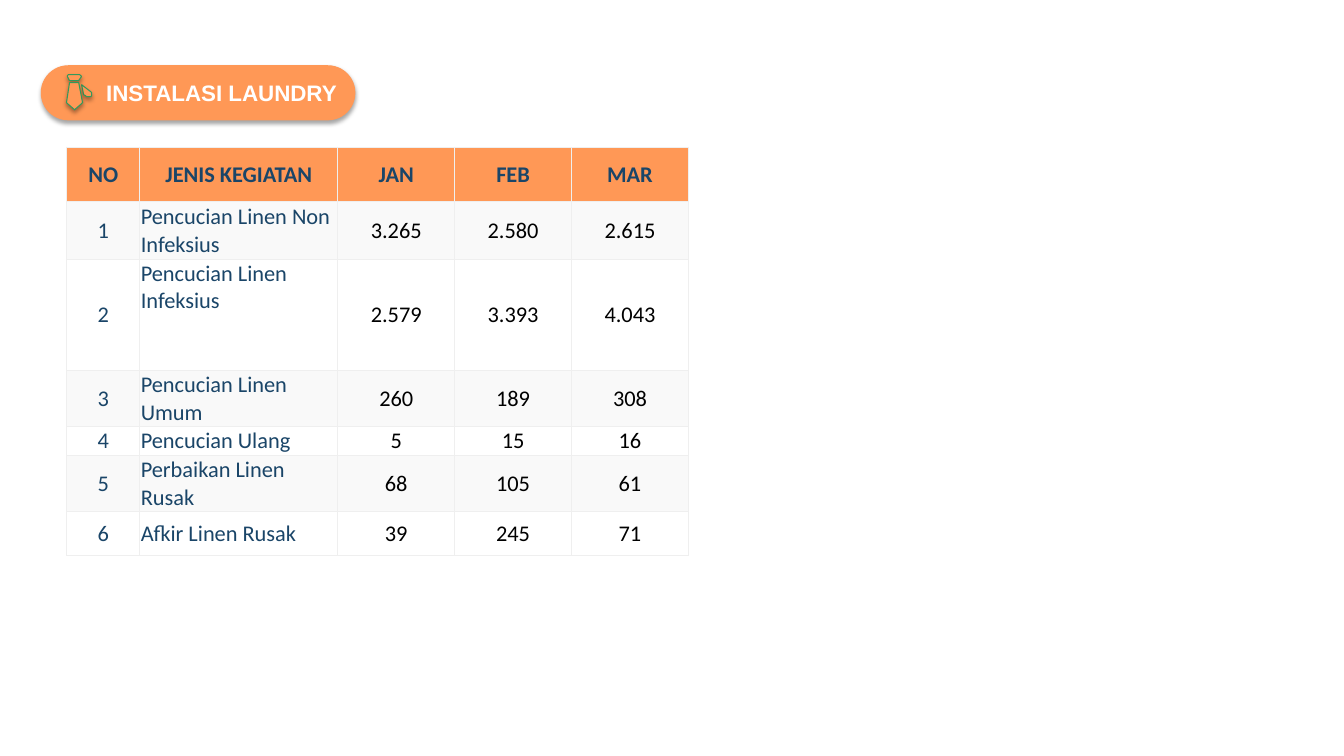
from dataclasses import dataclass

from lxml.etree import SubElement
from pptx import Presentation
from pptx.dml.color import RGBColor
from pptx.enum.shapes import MSO_SHAPE as Preset
from pptx.enum.text import MSO_ANCHOR as Anchor, PP_ALIGN as Align
from pptx.oxml import parse_xml
from pptx.oxml.ns import nsdecls, qn
from pptx.shapes.base import BaseShape
from pptx.table import Table, _Cell as Cell
from pptx.text.text import _Paragraph as Paragraph
from pptx.util import Pt

COLORS = {
    "orange": "FF9856", "green": "32995B", "navy": "1A4568", "black": "000000",
    "white": "FFFFFF", "band": "F9F9F9", "border": "EFEFEF",
}


@dataclass(frozen=True)
class Activity:
    name: str
    monthly: tuple[str, str, str]
    height: float
    anchor: Anchor = Anchor.MIDDLE


@dataclass(frozen=True)
class CellStyle:
    fill: str
    margins: tuple[float, float, float, float]
    bold: bool = False


HEADER = CellStyle("orange", (14.4, 5.8, 14.4, 5.8), bold=True)
BODY_STYLES = (CellStyle("band", (0.7, 0.7, 0.7, 0)), CellStyle("white", (0.7, 0.7, 0.7, 0)))
HEADINGS = ("NO", "JENIS KEGIATAN", "JAN", "FEB", "MAR")
COLUMN_WIDTHS = (52.3, 141.4, 83.5, 83.5, 83.5)
HEADER_HEIGHT = 39
ACTIVITIES = (
    Activity("Pencucian Linen Non Infeksius", ("3.265", "2.580", "2.615"), 41),
    Activity("Pencucian Linen Infeksius", ("2.579", "3.393", "4.043"), 79.3, Anchor.TOP),
    Activity("Pencucian Linen Umum", ("260", "189", "308"), 40),
    Activity("Pencucian Ulang", ("5", "15", "16"), 20.8),
    Activity("Perbaikan Linen Rusak", ("68", "105", "61"), 40),
    Activity("Afkir Linen Rusak", ("39", "245", "71"), 31.7),
)

# Outlines of the tie icon, in tenths of a point
TIE_PARTS = {
    "tail": ((583, 605), (598, 677), (612, 684), (619, 691), (648, 691), (655, 684),
             (655, 662), (648, 655)),
    "knot": ((490, 533), (482, 540), (482, 547), (497, 576), (562, 576), (583, 547),
             (576, 540), (569, 533)),
    "blade": ((497, 590), (475, 734), (526, 778), (533, 785), (540, 778), (590, 734),
              (562, 590)),
}


def rgb(color: str) -> RGBColor:
    return RGBColor.from_string(COLORS[color])


def set_font(paragraph: Paragraph, font_name: str, color: str, bold: bool) -> None:
    font = paragraph.font
    font.name, font.size, font.bold = font_name, Pt(16), bold
    font.color.rgb = rgb(color)


def style_badge_part(part: BaseShape, line_color: str) -> None:
    """Orange fill, thin outline and a soft shadow straight below."""
    part.fill.solid()
    part.fill.fore_color.rgb = rgb("orange")
    part.line.color.rgb = rgb(line_color)
    part.line.width = Pt(0.75)
    part._element.spPr.append(parse_xml(
        f'<a:effectLst {nsdecls("a")}><a:outerShdw blurRad="{Pt(3.1)}" dist="{Pt(1.8)}" '
        f'dir="5400000" rotWithShape="0"><a:srgbClr val="{COLORS["black"]}">'
        '<a:alpha val="35000"/></a:srgbClr></a:outerShdw></a:effectLst>'))


def add_badge(slide) -> None:
    shapes = slide.shapes.add_group_shape().shapes
    badge = shapes.add_shape(Preset.ROUNDED_RECTANGLE, Pt(29.5), Pt(47), Pt(224), Pt(38.6))
    badge.adjustments[0] = 0.5
    style_badge_part(badge, "orange")
    badge.text_frame.vertical_anchor = Anchor.MIDDLE
    title = badge.text_frame.paragraphs[0]
    title.text = "INSTALASI LAUNDRY"
    title.alignment = Align.RIGHT
    set_font(title, "Arial", "white", True)
    for start, *rest in TIE_PARTS.values():
        outline = shapes.build_freeform(*start, scale=Pt(0.1))
        outline.add_line_segments(rest, close=True)
        style_badge_part(outline.convert_to_shape(), "green")


def add_borders(cell: Cell) -> None:
    properties = cell._tc.get_or_add_tcPr()
    for side in ("lnL", "lnR", "lnT", "lnB"):
        border = SubElement(properties, qn(f"a:{side}"), w=str(Pt(1)))
        fill = SubElement(border, qn("a:solidFill"))
        SubElement(fill, qn("a:srgbClr"), val=COLORS["border"])


def fill_cell(cell: Cell, text: str, style: CellStyle, color: str,
              align: Align = Align.CENTER, anchor: Anchor = Anchor.MIDDLE) -> None:
    add_borders(cell)
    cell.fill.solid()
    cell.fill.fore_color.rgb = rgb(style.fill)
    cell.margin_left, cell.margin_top, cell.margin_right, cell.margin_bottom = map(
        Pt, style.margins)
    cell.vertical_anchor = anchor
    cell.text = text
    paragraph = cell.text_frame.paragraphs[0]
    paragraph.alignment = align
    set_font(paragraph, "Calibri", color, style.bold)


def fill_activity(table: Table, number: int, activity: Activity) -> None:
    style = BODY_STYLES[(number - 1) % 2]
    table.rows[number].height = Pt(activity.height)
    fill_cell(table.cell(number, 0), str(number), style, "navy")
    fill_cell(table.cell(number, 1), activity.name, style, "navy", Align.LEFT, activity.anchor)
    for column, count in enumerate(activity.monthly, start=2):
        fill_cell(table.cell(number, column), count, style, "black")


def add_activity_table(slide) -> None:
    height = HEADER_HEIGHT + sum(activity.height for activity in ACTIVITIES)
    table = slide.shapes.add_table(
        len(ACTIVITIES) + 1, len(HEADINGS),
        Pt(47.6), Pt(105.2), Pt(sum(COLUMN_WIDTHS)), Pt(height)).table
    table.rows[0].height = Pt(HEADER_HEIGHT)
    for index, (heading, width) in enumerate(zip(HEADINGS, COLUMN_WIDTHS)):
        table.columns[index].width = Pt(width)
        fill_cell(table.cell(0, index), heading, HEADER, "navy")
    for number, activity in enumerate(ACTIVITIES, start=1):
        fill_activity(table, number, activity)


def main() -> None:
    deck = Presentation()
    deck.slide_width, deck.slide_height = Pt(960), Pt(540)
    slide = deck.slides.add_slide(deck.slide_layouts[6])
    add_activity_table(slide)
    add_badge(slide)
    deck.save("out.pptx")


if __name__ == "__main__":
    main()
